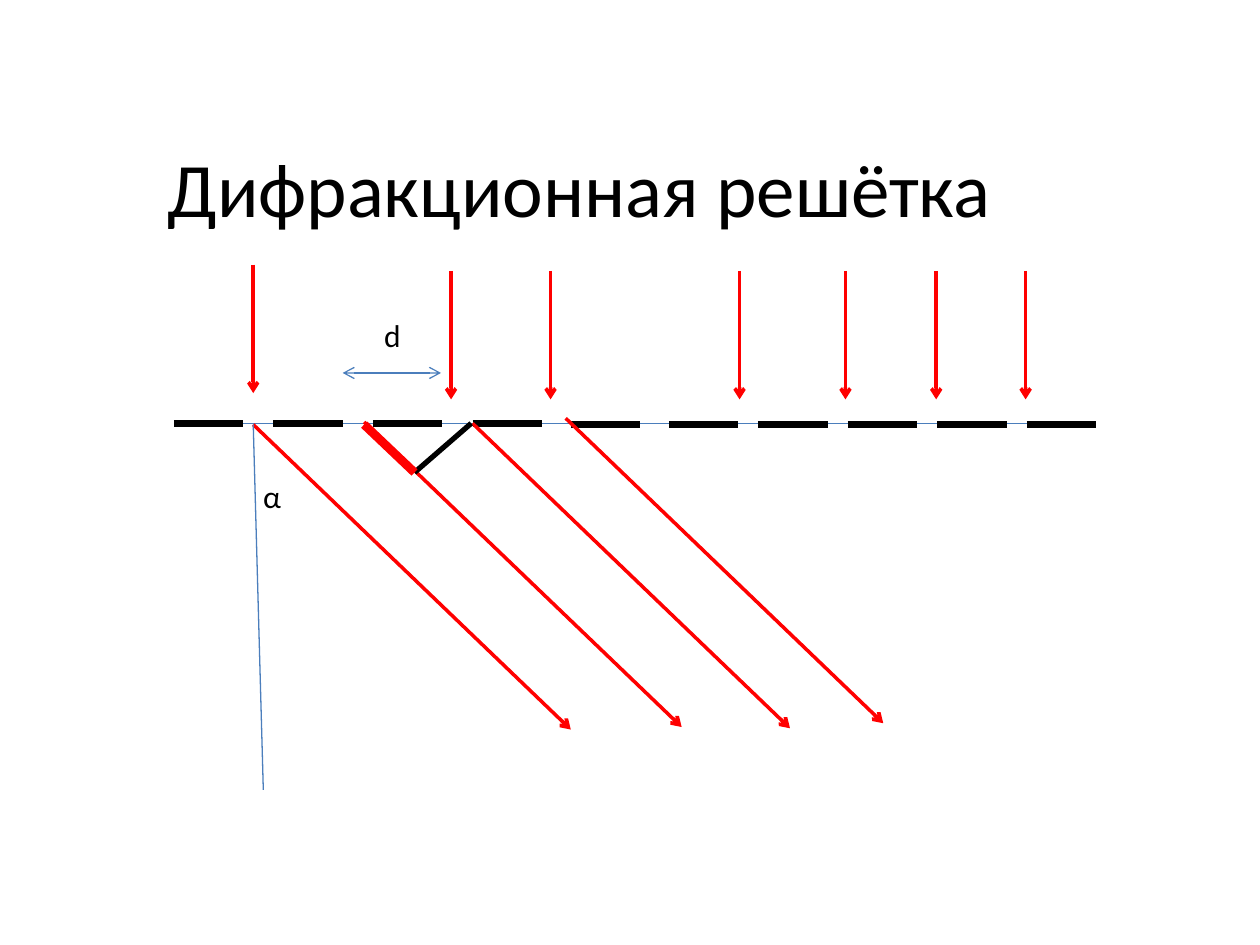
from lxml import etree
from pptx import Presentation
from pptx.dml.color import RGBColor
from pptx.enum import shapes, text
from pptx.oxml import ns
from pptx.util import Inches, Pt

FONT = "Calibri"
BLACK, RED, BLUE = "000000", "FF0000", "4B7EBC"

TITLE = "Дифракционная решётка"
LABELS = [("d", 2.95, 2.46, 0.34), ("α", 1.99, 3.74, 0.35)]

GRATING_Y = 3.36
BAR_LENGTH = 0.55
# first bar's left, y, step, number of bars
BAR_GROUPS = [(1.38, GRATING_Y, 0.79, 4), (4.53, 3.37, 0.78, 2), (6.02, 3.37, 0.71, 4)]

INCIDENT_LENGTH = 1.02
INCIDENT_STARTS = [(2.01, 2.1)] + [(x, 2.15) for x in (3.58, 4.37, 5.87, 6.71, 7.43, 8.14)]
DIFFRACTED_SHIFT = (2.52, 2.42)
DIFFRACTED_STARTS = [(2.01, 3.37), (2.89, 3.35), (3.75, 3.36), (4.49, 3.32)]
PATH_FOOT = (3.29, 3.75)


def color(hex_value):
    return RGBColor.from_string(hex_value)


def add_line(slide, start, end, hex_value, width, arrows=()):
    """Draw a straight line; arrows may name "headEnd" (start) and "tailEnd" (end)."""
    points = [Inches(value) for value in (*start, *end)]
    connector = slide.shapes.add_connector(shapes.MSO_CONNECTOR.STRAIGHT, *points)
    connector.line.color.rgb = color(hex_value)
    connector.line.width = Pt(width)
    for arrow in arrows:
        etree.SubElement(connector.line._get_or_add_ln(), ns.qn(f"a:{arrow}"), type="arrow")
    etree.SubElement(connector._element.spPr, ns.qn("a:effectLst"))


def write_text(shape, words, size):
    shape.text_frame.text = words
    font = shape.text_frame.paragraphs[0].runs[0].font
    font.name, font.size = FONT, Pt(size)
    font.color.rgb = color(BLACK)


def add_title(slide):
    title = slide.shapes.title
    title.left, title.top = Inches(0.35), Inches(0.68)
    title.width, title.height = Inches(8.5), Inches(1.61)
    write_text(title, TITLE, 44)
    title.text_frame.vertical_anchor = text.MSO_ANCHOR.MIDDLE
    title.text_frame.paragraphs[0].alignment = text.PP_ALIGN.CENTER


def add_label(slide, words, left, top, width):
    box = slide.shapes.add_textbox(Inches(left), Inches(top), Inches(width), Inches(0.4))
    box.text_frame.word_wrap = False
    box.text_frame.auto_size = text.MSO_AUTO_SIZE.SHAPE_TO_FIT_TEXT
    write_text(box, words, 18)


def add_grating(slide):
    add_line(slide, (1.38, GRATING_Y), (8.54, GRATING_Y), BLUE, 0.75)
    for left, y, step, count in BAR_GROUPS:
        for index in range(count):
            x = left + index * step
            add_line(slide, (x, y), (x + BAR_LENGTH, y), BLACK, 4)
    add_line(slide, (2.72, 2.96), (3.5, 2.96), BLUE, 0.75, ("headEnd", "tailEnd"))


def add_rays(slide):
    for x, y in INCIDENT_STARTS:
        add_line(slide, (x, y), (x, y + INCIDENT_LENGTH), RED, 2, ("tailEnd",))
    shift_x, shift_y = DIFFRACTED_SHIFT
    for x, y in DIFFRACTED_STARTS:
        add_line(slide, (x, y), (x + shift_x, y + shift_y), RED, 2, ("tailEnd",))
    add_line(slide, (3.74, GRATING_Y), PATH_FOOT, BLACK, 3)
    add_line(slide, (2.01, 3.37), (2.09, 6.27), BLUE, 0.75)
    add_line(slide, PATH_FOOT, (2.89, 3.37), RED, 5)


def main():
    presentation = Presentation()
    presentation.slide_width, presentation.slide_height = Inches(10), Inches(7.5)
    slide = presentation.slides.add_slide(presentation.slide_layouts[5])
    add_title(slide)
    add_grating(slide)
    add_rays(slide)
    for label in LABELS:
        add_label(slide, *label)
    presentation.save("out.pptx")


if __name__ == "__main__":
    main()
